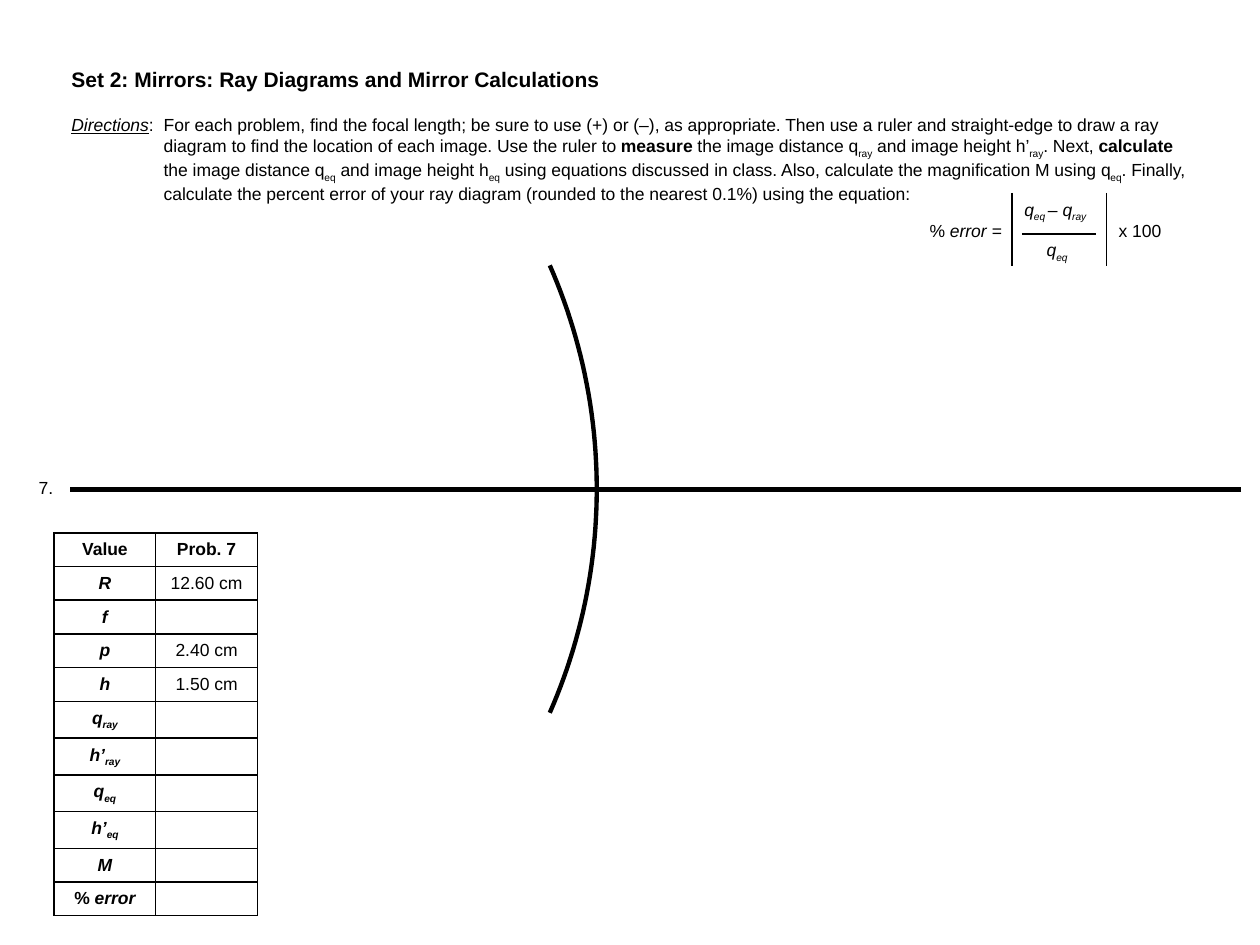
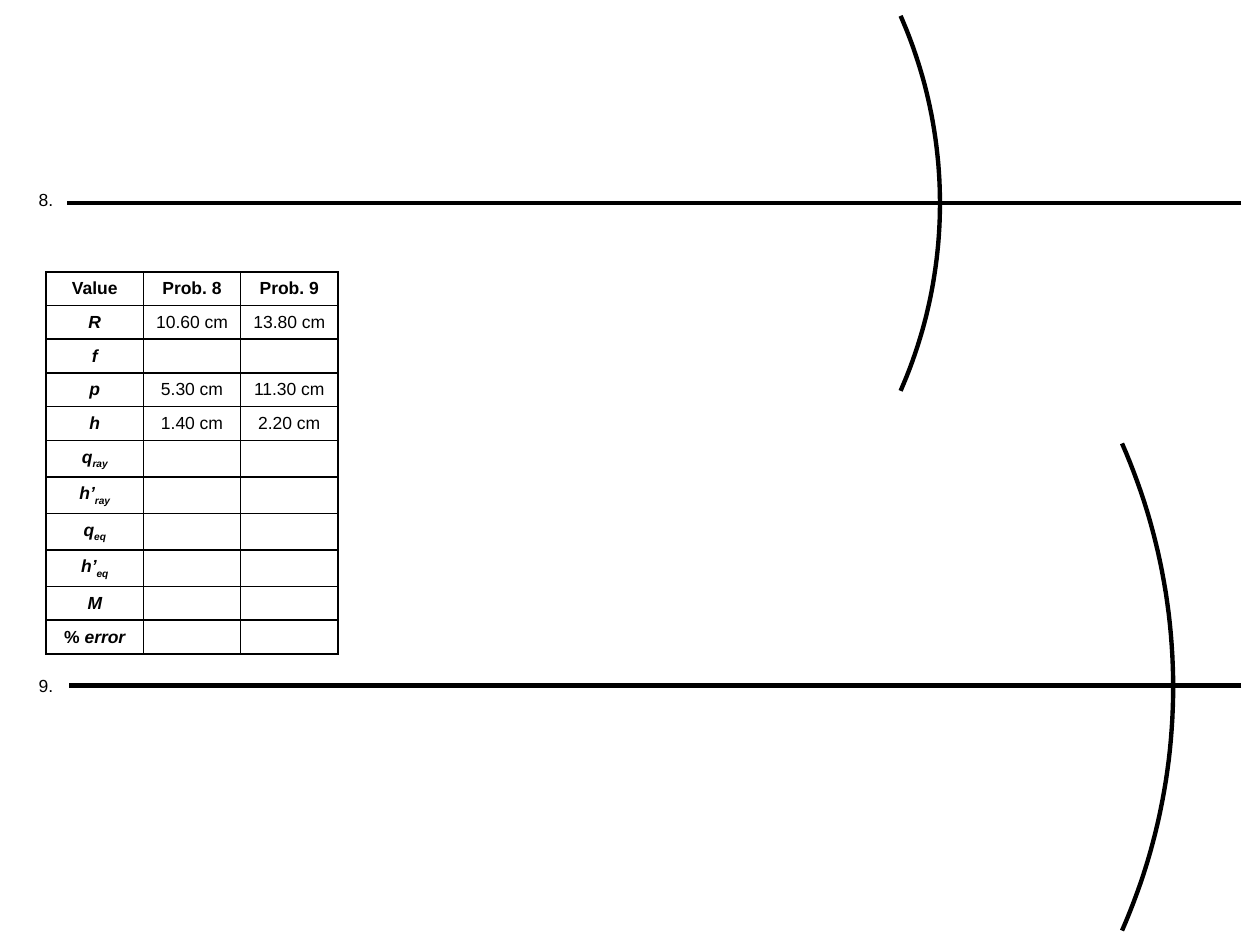
from math import atan, cos, sin

from lxml.etree import SubElement
from pptx import Presentation
from pptx.dml.color import RGBColor
from pptx.enum.shapes import MSO_CONNECTOR as Connector
from pptx.enum.text import MSO_ANCHOR as Anchor, MSO_AUTO_SIZE as AutoSize, PP_ALIGN as Align
from pptx.oxml.ns import qn
from pptx.util import Cm, Pt

COLORS = {"ink": "000000", "paper": "FFFFFF"}
FONT = "Arial"
BODY_SIZE = 10
AXIS_END = 25.02
MIRROR_SAG = 0.21  # depth of a mirror as a share of its half height
ARC_STEPS = 24

# Run formats
PLAIN, BOLD, ITALIC = {}, {"bold": True}, {"italic": True}
SUB = {"sub": True}
ITALIC_SUB = ITALIC | SUB
SYMBOL = BOLD | ITALIC
SYMBOL_SUB = SYMBOL | SUB


def color(name):
    return RGBColor.from_string(COLORS[name])


def write(paragraph, text, size=BODY_SIZE, bold=False, italic=False,
          underline=False, sub=False):
    run = paragraph.add_run()
    run.text = text
    font = run.font
    font.name, font.size = FONT, Pt(size)
    font.bold, font.italic, font.underline = bold, italic, underline
    font.color.rgb = color("ink")
    if sub:
        run._r.get_or_add_rPr().set("baseline", "-25000")


class Worksheet:
    """Holds the deck, its line style and the slide being filled."""

    def __init__(self):
        self.deck = Presentation()
        self.deck.slide_width, self.deck.slide_height = Cm(25.4), Cm(19.05)
        self.slide = None

    def new_slide(self):
        self.slide = self.deck.slides.add_slide(self.deck.slide_layouts[6])
        fill = self.slide.background.fill
        fill.solid()
        fill.fore_color.rgb = color("paper")

    def text(self, left, top, width, height, *lines, wrap=False, hanging=0):
        """Each line is a list of (text, format) runs."""
        box = self.slide.shapes.add_textbox(Cm(left), Cm(top), Cm(width), Cm(height))
        frame = box.text_frame
        frame.word_wrap = wrap
        frame.auto_size = AutoSize.SHAPE_TO_FIT_TEXT
        for index, runs in enumerate(lines):
            paragraph = frame.add_paragraph() if index else frame.paragraphs[0]
            if hanging:
                properties = paragraph._p.get_or_add_pPr()
                properties.set("marL", str(Cm(hanging)))
                properties.set("indent", str(0 if index else -Cm(hanging)))
            for words, style in runs:
                write(paragraph, words, **style)

    def line(self, x1, y1, x2, y2, width=0.75):
        rule = self.slide.shapes.add_connector(
            Connector.STRAIGHT, Cm(x1), Cm(y1), Cm(x2), Cm(y2))
        rule.line.color.rgb = color("ink")
        rule.line.width = Pt(width)
        SubElement(rule._element.spPr, qn("a:effectLst"))

    def mirror(self, vertex_x, vertex_y, half_height):
        """Circular arc drawn as an upper and a lower half meeting at the vertex."""
        half_angle = 2 * atan(MIRROR_SAG)
        radius = half_height / sin(half_angle)
        for side in (-1, 1):
            points = []
            for step in range(ARC_STEPS + 1):
                angle = half_angle * (1 - step / ARC_STEPS)
                points.append((Cm(vertex_x - radius * (1 - cos(angle))),
                               Cm(vertex_y + side * radius * sin(angle))))
            builder = self.slide.shapes.build_freeform(*points[0])
            builder.add_line_segments(points[1:], close=False)
            arc = builder.convert_to_shape()
            arc.shadow.inherit = False
            arc.fill.background()
            arc.line.color.rgb = color("ink")
            arc.line.width = Pt(2.5)

    def problem(self, number, axis, label_top, vertex, half_height):
        axis_left, axis_y = axis
        self.line(AXIS_END, axis_y, axis_left, axis_y, width=2.5)
        self.mirror(*vertex, half_height)
        self.text(0.53, label_top, 0.81, 0.69, [(f"{number}.", PLAIN)])

    def value_table(self, left, top, column_width, row_height, sub_row_height, givens):
        """givens maps a problem number to its known values by symbol."""
        rows = [[[("Value", BOLD)]] + [[(f"Prob. {number}", BOLD)] for number in givens]]
        heights = [row_height]
        for symbol, subscript in QUANTITIES:
            label = [(symbol, SYMBOL)]
            if symbol == "% error":
                label = [("% ", BOLD), ("error", SYMBOL)]
            if subscript:
                label.append((subscript, SYMBOL_SUB))
            known = [[(values[symbol], PLAIN)] if symbol in values else []
                     for values in givens.values()]
            rows.append([label] + known)
            heights.append(sub_row_height if subscript else row_height)

        columns = len(rows[0])
        grid = self.slide.shapes.add_table(
            len(rows), columns, Cm(left), Cm(top),
            Cm(column_width * columns), Cm(sum(heights))).table
        grid.first_row = grid.horz_banding = False
        for column in grid.columns:
            column.width = Cm(column_width)
        for r, (height, row) in enumerate(zip(heights, rows)):
            grid.rows[r].height = Cm(height)
            for c, runs in enumerate(row):
                self.cell(grid.cell(r, c), runs)

    def cell(self, cell, runs):
        cell.margin_left = cell.margin_right = 0
        cell.vertical_anchor = Anchor.MIDDLE
        paragraph = cell.text_frame.paragraphs[0]
        paragraph.alignment = Align.CENTER
        for words, style in runs:
            write(paragraph, words, **style)
        if not runs:  # keeps an empty row as low as a filled one
            SubElement(paragraph._p, qn("a:endParaRPr")).set("sz", str(BODY_SIZE * 100))
        # Borders come before the fill in the cell properties
        properties = cell._tc.get_or_add_tcPr()
        for edge in ("lnL", "lnR", "lnT", "lnB"):
            border = SubElement(properties, qn(f"a:{edge}"), w=str(Pt(1)))
            fill = SubElement(border, qn("a:solidFill"))
            SubElement(fill, qn("a:srgbClr"), val=COLORS["ink"])
        cell.fill.background()


# Table rows: symbol and subscript
QUANTITIES = [("R", ""), ("f", ""), ("p", ""), ("h", ""),
              ("q", "ray"), ("h’", "ray"), ("q", "eq"), ("h’", "eq"),
              ("M", ""), ("% error", "")]

DIRECTIONS = [
    [("Directions", ITALIC | {"underline": True}),
     (":\tFor each problem, find the focal length; be sure to use (+) or (–), as "
      "appropriate. Then use a ruler and straight-edge to draw a ray", PLAIN)],
    [("diagram to find the location of each image. Use the ruler to ", PLAIN),
     ("measure", BOLD), (" the image distance q", PLAIN), ("ray", SUB),
     (" and image height h’", PLAIN), ("ray", SUB), (". Next, ", PLAIN),
     ("calculate", BOLD)],
    [("the image distance q", PLAIN), ("eq", SUB), (" and image height h", PLAIN),
     ("eq", SUB),
     (" using equations discussed in class. Also, calculate the magnification M using q",
      PLAIN), ("eq", SUB), (". Finally,", PLAIN)],
    [("calculate the percent error of your ray diagram (rounded to the nearest 0.1%) "
      "using the equation:", PLAIN)],
]


def mirrors_intro(sheet):
    sheet.new_slide()
    # Title and directions
    sheet.text(1.19, 1.22, 11.51, 0.76,
               [("Set 2: Mirrors: Ray Diagrams and Mirror Calculations",
                 BOLD | {"size": 12})])
    sheet.text(1.19, 2.18, 23.42, 1.96, *DIRECTIONS, wrap=True, hanging=1.86)

    # Percent error equation
    sheet.text(18.49, 4.32, 2.08, 0.69, [("%", PLAIN), (" error =", ITALIC)])
    sheet.text(22.3, 4.32, 1.37, 0.69, [("x 100", PLAIN)])
    sheet.text(20.4, 3.89, 1.93, 0.69,
               [("q", ITALIC), ("eq ", ITALIC_SUB), ("– q", ITALIC), ("ray", ITALIC_SUB)])
    sheet.text(20.85, 4.7, 0.97, 0.69, [("q", ITALIC), ("eq", ITALIC_SUB)])
    for bar_x in (20.4, 22.3):
        sheet.line(bar_x, 3.89, bar_x, 5.36)
    sheet.line(20.6, 4.72, 22.1, 4.72)

    # Problem 7
    sheet.problem(7, (1.42, 9.87), 9.5, (12.03, 9.86), 4.51)
    sheet.value_table(1.09, 10.74, 2.05, 0.68, 0.74,
                      {7: {"R": "12.60 cm", "p": "2.40 cm", "h": "1.50 cm"}})


def more_mirrors(sheet):
    sheet.new_slide()
    sheet.problem(8, (1.35, 4.09), 3.68, (18.95, 4.1), 3.78)
    sheet.value_table(0.93, 5.48, 1.96, 0.65, 0.7,
                      {8: {"R": "10.60 cm", "p": "5.30 cm", "h": "1.40 cm"},
                       9: {"R": "13.80 cm", "p": "11.30 cm", "h": "2.20 cm"}})
    sheet.problem(9, (1.4, 13.82), 13.49, (23.65, 13.85), 4.91)


def main():
    sheet = Worksheet()
    mirrors_intro(sheet)
    more_mirrors(sheet)
    sheet.deck.save("out.pptx")


if __name__ == "__main__":
    main()
